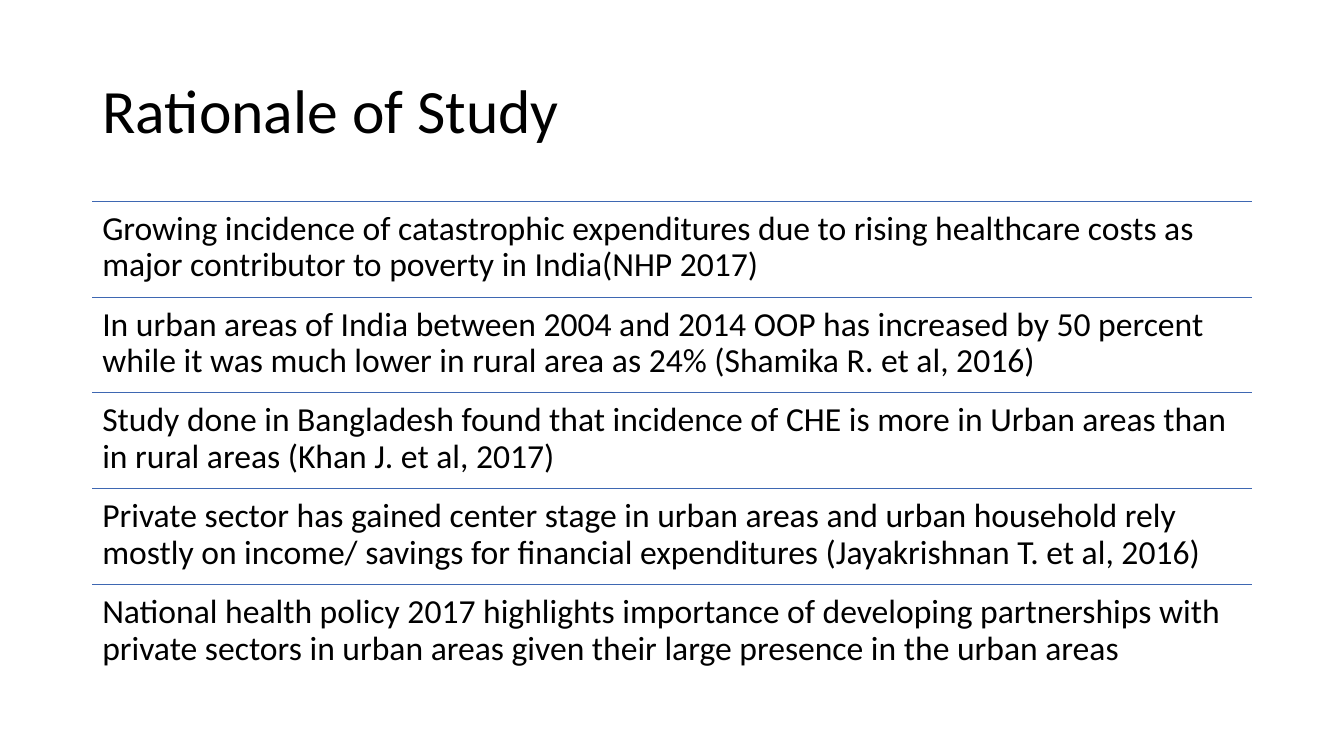
from lxml import etree
from pptx import Presentation
from pptx.dml.color import RGBColor
from pptx.enum import shapes, text
from pptx.oxml.ns import qn
from pptx.util import Pt

BLACK = RGBColor(0x00, 0x00, 0x00)
RULE_BLUE = RGBColor(0x3E, 0x67, 0xB2)
FONT = "Calibri"
LEFT, WIDTH = 66, 828
FIRST_ROW_TOP, ROW_HEIGHT = 143.6, 68.5

REASONS = [
    "Growing incidence of catastrophic expenditures due to rising healthcare costs as "
    "major contributor to poverty in India(NHP 2017)",
    "In urban areas of India between 2004 and 2014 OOP has increased by 50 percent "
    "while it was much lower in rural area as 24% (Shamika R. et al, 2016)",
    "Study done in Bangladesh found that incidence of CHE is more in Urban areas than "
    "in rural areas (Khan J. et al, 2017)",
    "Private sector has gained center stage in urban areas and urban household rely "
    "mostly on income/ savings for financial expenditures (Jayakrishnan T. et al, 2016)",
    "National health policy 2017 highlights importance of developing partnerships with "
    "private sectors in urban areas given their large presence in the urban areas",
]


def write(tf, wording, size, anchor):
    tf.text = wording
    tf.word_wrap = True
    tf.auto_size = text.MSO_AUTO_SIZE.NONE
    tf.vertical_anchor = anchor
    p = tf.paragraphs[0]
    p.alignment = text.PP_ALIGN.LEFT
    p.line_spacing = 0.9
    font = p.runs[0].font
    font.name = FONT
    font.size = Pt(size)
    font.color.rgb = BLACK


def add_title(s, wording):
    sp = s.shapes.title
    sp.left, sp.top, sp.width, sp.height = Pt(LEFT), Pt(28.75), Pt(WIDTH), Pt(104.4)
    write(sp.text_frame, wording, 44, text.MSO_ANCHOR.MIDDLE)


def add_rule(s, y):
    line = s.shapes.add_connector(
        shapes.MSO_CONNECTOR.STRAIGHT, Pt(LEFT), Pt(y), Pt(LEFT + WIDTH), Pt(y))
    line.line.color.rgb = RULE_BLUE
    line.line.width = Pt(0.5)
    etree.SubElement(line._element.spPr, qn("a:effectLst"))


def add_reason(s, y, wording):
    sp = s.shapes.add_textbox(Pt(LEFT), Pt(y), Pt(WIDTH), Pt(ROW_HEIGHT))
    tf = sp.text_frame
    tf.margin_left = tf.margin_right = tf.margin_top = tf.margin_bottom = Pt(7.2)
    write(tf, wording, 24, text.MSO_ANCHOR.TOP)


def main():
    prs = Presentation()
    prs.slide_width, prs.slide_height = Pt(960), Pt(540)
    s = prs.slides.add_slide(prs.slide_layouts.get_by_name("Title Only"))
    add_title(s, "Rationale of Study")
    for i, reason in enumerate(REASONS):
        y = FIRST_ROW_TOP + i * ROW_HEIGHT
        add_rule(s, y)
        add_reason(s, y, reason)
    prs.save("out.pptx")


if __name__ == "__main__":
    main()
